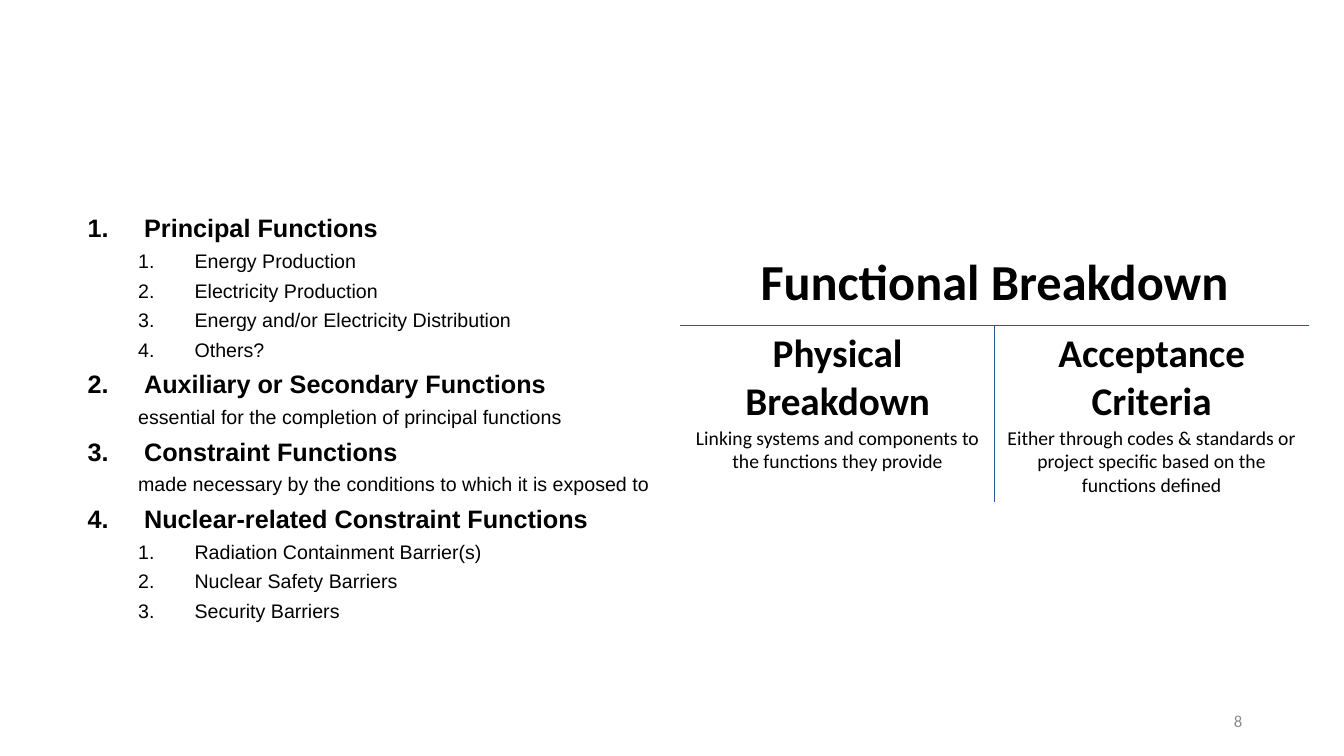
from lxml.etree import SubElement
from pptx import Presentation
from pptx.dml.color import RGBColor
from pptx.enum.text import MSO_ANCHOR, PP_ALIGN
from pptx.oxml.ns import qn
from pptx.util import Inches, Pt

BLACK, WHITE, BLUE, GREY = "000000", "FFFFFF", "2F5597", "8C8C8C"

FUNCTIONS = [
    ("Principal Functions", True, [
        "Energy Production",
        "Electricity Production",
        "Energy and/or Electricity Distribution",
        "Others?",
    ]),
    ("Auxiliary or Secondary Functions", False,
     ["essential for the completion of principal functions"]),
    ("Constraint Functions", False,
     ["made necessary by the conditions to which it is exposed to"]),
    ("Nuclear-related Constraint Functions", True, [
        "Radiation Containment Barrier(s)",
        "Nuclear Safety Barriers",
        "Security Barriers",
    ]),
]
BREAKDOWNS = [
    ("Physical Breakdown",
     "Linking systems and components to the functions they provide"),
    ("Acceptance Criteria",
     "Either through codes & standards or project specific based on the functions defined"),
]


def rgb(color):
    return RGBColor.from_string(color)


def write(p, text, font, size, color=BLACK, bold=False, align=PP_ALIGN.LEFT):
    p.text = text
    p.alignment = align
    for r in p.runs:
        r.font.name = font
        r.font.size = Pt(size)
        r.font.bold = bold
        r.font.color.rgb = rgb(color)


def set_list(p, margin, indent, numbered):
    pPr = p._p.get_or_add_pPr()
    pPr.set("marL", str(Inches(margin)))
    pPr.set("indent", str(Inches(indent)))
    if numbered:
        SubElement(pPr, qn("a:buFont"), typeface="+mj-lt")
        SubElement(pPr, qn("a:buAutoNum"), type="arabicPeriod")
    else:
        SubElement(pPr, qn("a:buNone"))


def add_function_list(s, x, y, w, h):
    body = s.placeholders[1]
    body.left, body.top, body.width, body.height = map(Inches, (x, y, w, h))
    tf = body.text_frame
    tf.word_wrap = True
    tf.vertical_anchor = MSO_ANCHOR.TOP
    lines = []
    for heading, numbered, details in FUNCTIONS:
        lines.append((heading, 0, True))
        lines += [(detail, 1, numbered) for detail in details]
    for i, (text, level, numbered) in enumerate(lines):
        p = tf.add_paragraph() if i else tf.paragraphs[0]
        p.level = level
        p.line_spacing = 1.2
        p.space_before = Pt(1 if i else 0)
        hanging = 0.56 if numbered else 0
        set_list(p, 0.5 * level + hanging, -hanging, numbered)
        write(p, text, "Arial", 14 if level else 18, bold=level == 0)


def set_borders(cell, left, right, top, bottom):
    tcPr = cell._tc.get_or_add_tcPr()
    for side, color in zip("LRTB", (left, right, top, bottom)):
        ln = SubElement(tcPr, qn(f"a:ln{side}"), w=str(Pt(1)))
        fill = SubElement(ln, qn("a:solidFill"))
        SubElement(fill, qn("a:srgbClr"), val=color)
    cell.fill.background()


def add_breakdown_table(s, x, y, w, h):
    table = s.shapes.add_table(2, 2, *map(Inches, (x, y, w, h))).table
    table.first_row = table.horz_banding = False
    table.rows[0].height = Inches(0.78)
    table.rows[1].height = Inches(h - 0.78)
    for col in range(2):
        set_borders(table.cell(0, col), WHITE, WHITE, WHITE, BLUE)
    table.cell(0, 0).merge(table.cell(0, 1))
    write(table.cell(0, 0).text_frame.paragraphs[0], "Functional Breakdown",
          "Calibri", 36, bold=True, align=PP_ALIGN.CENTER)
    for col, (heading, detail) in enumerate(BREAKDOWNS):
        cell = table.cell(1, col)
        set_borders(cell, BLUE if col else WHITE, WHITE if col else BLUE, BLUE, WHITE)
        tf = cell.text_frame
        write(tf.paragraphs[0], heading, "Calibri", 28, bold=True, align=PP_ALIGN.CENTER)
        write(tf.add_paragraph(), detail, "Calibri", 14, align=PP_ALIGN.CENTER)


def add_page_number(s, x, y, w, h):
    tf = s.shapes.add_textbox(*map(Inches, (x, y, w, h))).text_frame
    tf.word_wrap = True
    tf.vertical_anchor = MSO_ANCHOR.MIDDLE
    write(tf.paragraphs[0], "8", "Calibri", 12, GREY, align=PP_ALIGN.RIGHT)


def main():
    prs = Presentation()
    prs.slide_width, prs.slide_height = Inches(13.33), Inches(7.5)
    s = prs.slides.add_slide(prs.slide_layouts[1])
    title = s.shapes.title._element
    title.getparent().remove(title)
    add_function_list(s, 0.77, 2, 5.81, 4.25)
    add_page_number(s, 9.42, 6.95, 3, 0.4)
    add_breakdown_table(s, 6.75, 2.45, 6.23, 2.52)
    prs.save("out.pptx")


if __name__ == "__main__":
    main()
